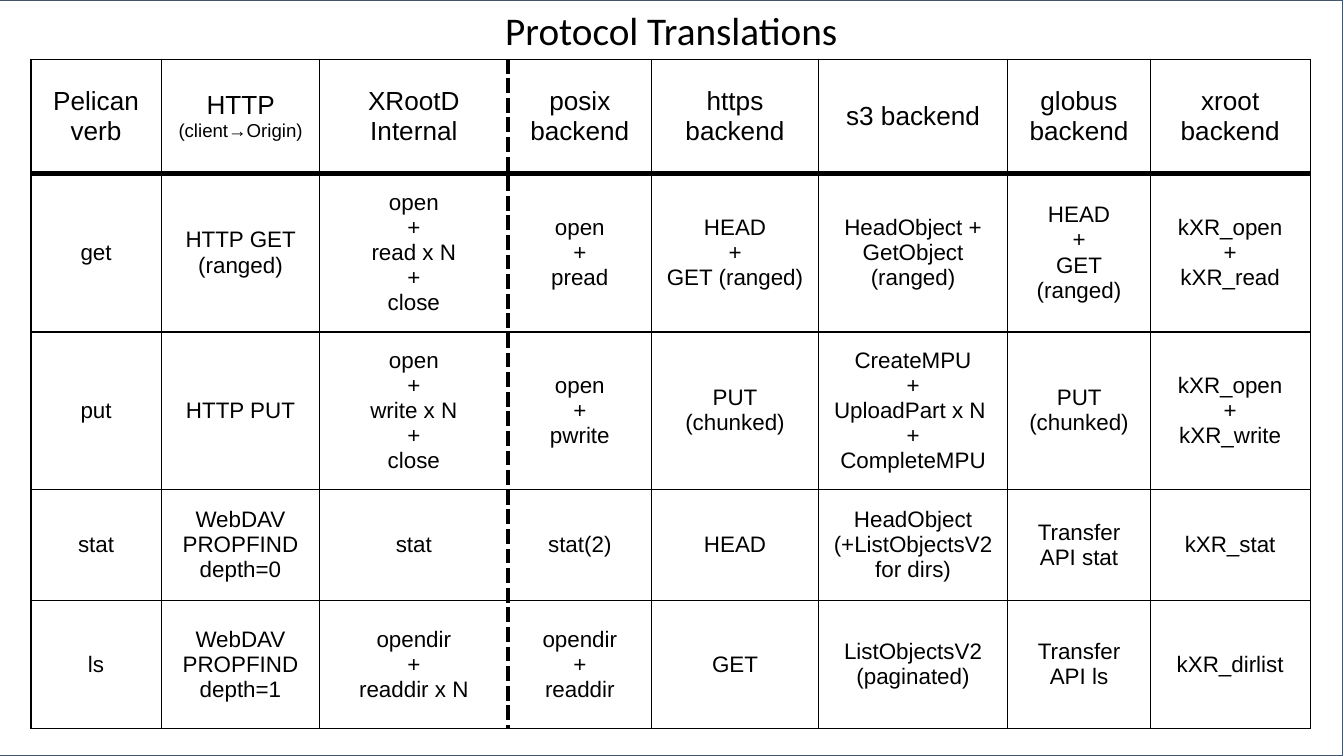
import pptx
import pptx.dml.color
import pptx.enum.shapes
import pptx.enum.text
import pptx.oxml
import pptx.oxml.ns
import pptx.util
from pptx.util import Inches

BLACK = "000000"
COL_WIDTHS = [0.97, 1.18, 1.4, 1.07, 1.24, 1.41, 1.06, 1.19]
ROW_HEIGHTS = [0.85, 1.18, 1.17, 0.83, 0.95]
DIVIDER = 3  # the dashed line stands left of this column

# "\n" starts a paragraph, "\v" breaks a line, "|" starts a small run
ROWS = [
    ["Pelican verb", "HTTP |(client→Origin)", "XRootD Internal",
     "posix backend", "https backend", "s3 backend",
     "globus\nbackend", "xroot\nbackend"],
    ["get", "HTTP GET (ranged)", "open\n+\vread x N\n+\nclose",
     "open\n+\npread", "HEAD\n+\nGET (ranged)",
     "HeadObject +\nGetObject (ranged)", "HEAD\n+\nGET\n(ranged)",
     "kXR_open\n+\nkXR_read"],
    ["put", "HTTP PUT", "open\n+\nwrite x N\n+\nclose",
     "open\n+\npwrite", "PUT\n(chunked)",
     "CreateMPU\n+\nUploadPart x N \n+ CompleteMPU", "PUT (chunked)",
     "kXR_open\n+\nkXR_write"],
    ["stat", "WebDAV PROPFIND\ndepth=0", "stat", "stat(2)", "HEAD",
     "HeadObject\n(+ListObjectsV2 for dirs)", "Transfer API stat",
     "kXR_stat"],
    ["ls", "WebDAV PROPFIND\ndepth=1", "opendir\n+\nreaddir x N",
     "opendir\n+\nreaddir", "GET", "ListObjectsV2 (paginated)",
     "Transfer API ls", "kXR_dirlist"],
]


def rgb(value):
    return pptx.dml.color.RGBColor.from_string(value)


def set_attrs(obj, values):
    for name, value in values.items():
        setattr(obj, name, value)


def margins(size):
    sides = ("left", "right", "top", "bottom")
    return {f"margin_{side}": Inches(size) for side in sides}


def write(tf, text, font, size, small=10):
    """Fill a frame with centred text; runs after "|" get the small size."""
    for i, line in enumerate(text.split("\n")):
        p = tf.paragraphs[0] if i == 0 else tf.add_paragraph()
        p.alignment = pptx.enum.text.PP_ALIGN.CENTER
        for j, part in enumerate(line.split("|")):
            for k, piece in enumerate(part.split("\v")):
                if k:
                    p.add_line_break()
                r = p.add_run()
                r.text = piece
                points = pptx.util.Pt(small if j else size)
                set_attrs(r.font, {"name": font, "size": points})
                r.font.color.rgb = rgb(BLACK)


def add_border(cell, side, width, dash="solid"):
    """Sides must be added in the order L, R, T, B, before the fill."""
    ns = pptx.oxml.ns.nsdecls("a")
    xml = (f'<a:ln{side} {ns} w="{pptx.util.Pt(width)}">'
           f'<a:solidFill><a:srgbClr val="{BLACK}"/></a:solidFill>'
           f'<a:prstDash val="{dash}"/></a:ln{side}>')
    cell._tc.get_or_add_tcPr().append(pptx.oxml.parse_xml(xml))


def format_cell(cell, row, col):
    thin, thick, dashed = (0.75,), (3,), (3, "dash")
    borders = {
        "L": dashed if col == DIVIDER else thin,
        "R": dashed if col == DIVIDER - 1 else thin,
        "T": thick if row == 1 else thin,
        "B": thick if row == 0 else thin,
    }
    for side, style in borders.items():
        add_border(cell, side, *style)
    cell.fill.background()
    set_attrs(cell, {"vertical_anchor": pptx.enum.text.MSO_ANCHOR.MIDDLE,
                     **margins(0.1)})


def add_frame(s, width, height):
    sp = s.shapes.add_shape(pptx.enum.shapes.MSO_SHAPE.RECTANGLE,
                            Inches(-0.01), 0, width, height)
    sp.shadow.inherit = False
    sp.fill.solid()
    sp.fill.fore_color.rgb = rgb("FFFFFF")
    sp.line.color.rgb = rgb("44546A")
    sp.line.width = pptx.util.Pt(0.75)


def add_protocol_table(s):
    table = s.shapes.add_table(
        len(ROWS), len(COL_WIDTHS), Inches(0.23), Inches(0.44),
        Inches(sum(COL_WIDTHS)), Inches(sum(ROW_HEIGHTS))).table
    set_attrs(table, {"first_row": False, "horz_banding": False})
    for column, width in zip(table.columns, COL_WIDTHS):
        column.width = Inches(width)
    for i, (texts, height) in enumerate(zip(ROWS, ROW_HEIGHTS)):
        table.rows[i].height = Inches(height)
        for j, text in enumerate(texts):
            cell = table.cell(i, j)
            format_cell(cell, i, j)
            write(cell.text_frame, text, "Arial", 12 if i else 14)


def add_title(s, text):
    tf = s.shapes.add_textbox(Inches(2.92), Inches(0.04),
                              Inches(4.15), Inches(0.37)).text_frame
    set_attrs(tf, {"word_wrap": True,
                   "vertical_anchor": pptx.enum.text.MSO_ANCHOR.MIDDLE,
                   **margins(0.1)})
    write(tf, text, "Calibri", 21)


def main():
    prs = pptx.Presentation()
    width = Inches(10)
    height = width * 9 // 16
    set_attrs(prs, {"slide_width": width, "slide_height": height})
    s = prs.slides.add_slide(prs.slide_layouts[6])
    add_frame(s, width, height)
    add_protocol_table(s)
    add_title(s, "Protocol Translations")
    prs.save("out.pptx")


if __name__ == "__main__":
    main()
